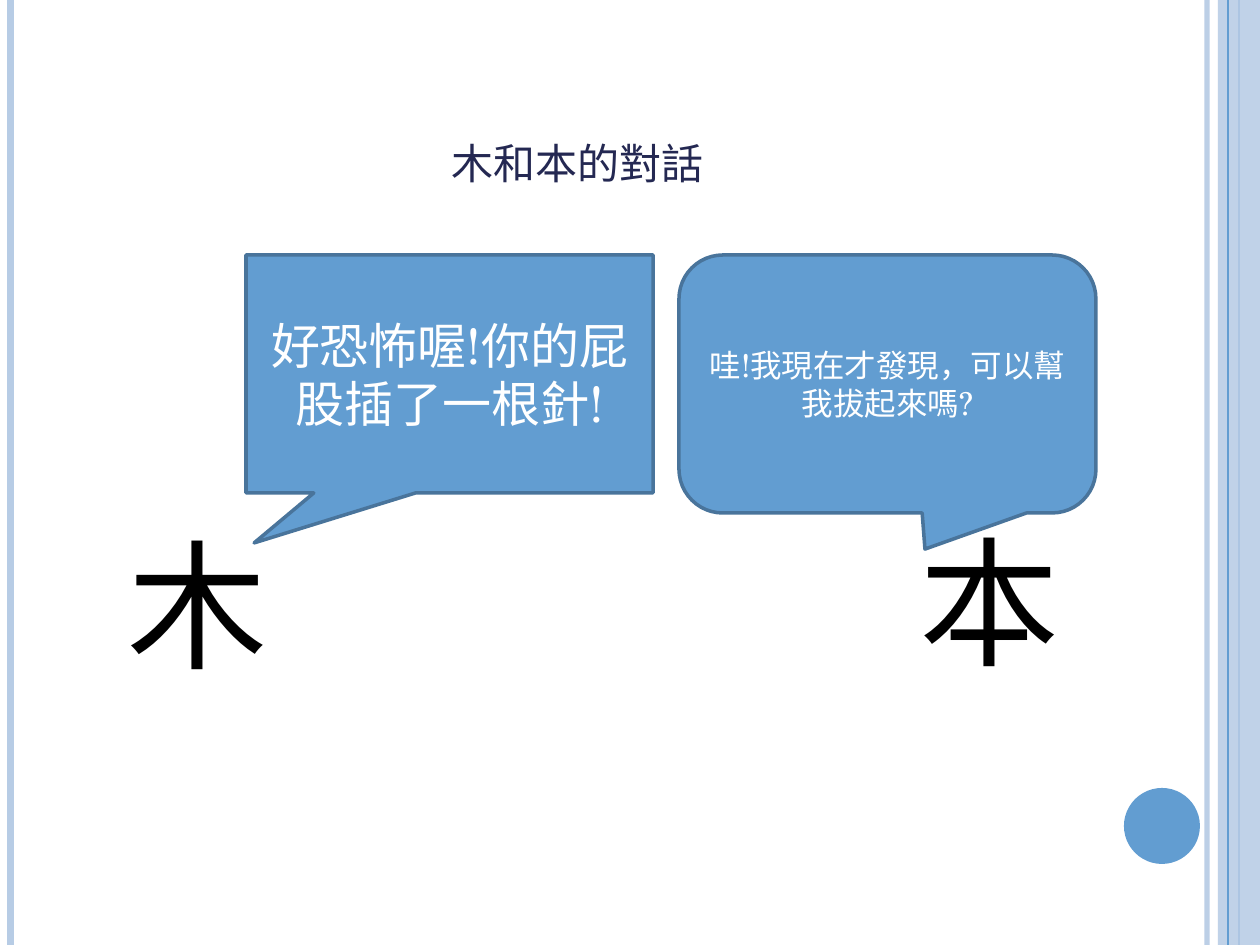
from dataclasses import dataclass

from lxml.etree import SubElement
from pptx import Presentation
from pptx.dml.color import RGBColor
from pptx.enum.shapes import MSO_CONNECTOR, MSO_SHAPE
from pptx.enum.text import MSO_ANCHOR as Anchor, MSO_AUTO_SIZE as AutoSize, PP_ALIGN as Align
from pptx.oxml.ns import qn
from pptx.util import Emu, Pt

EMU_PER_PX = 914400 / 126
SLIDE_WIDTH, SLIDE_HEIGHT = 1260, 945


@dataclass(frozen=True)
class Theme:
    font: str = "TeX Gyre Schola"
    blue: str = "629DD1"
    pale_blue: str = "B7CCE5"
    outline: str = "49749B"
    navy: str = "242852"
    black: str = "000000"
    white: str = "FFFFFF"
    title_size: int = 30
    character_size: int = 80
    large_speech_size: int = 28
    small_speech_size: int = 18


THEME = Theme()


def px(length):
    return Emu(round(length * EMU_PER_PX))


def rgb(color):
    return RGBColor.from_string(color)


def set_opacity(color_format, percent):
    """Make a solid fill or line see-through; color_format is its fill."""
    color = color_format._xPr.find(qn("a:solidFill"))[0]
    SubElement(color, qn("a:alpha"), val=str(percent * 1000))


def add_stripe(slide, x, color, width, opacity=100):
    """Draw a vertical line over the full slide height."""
    line = slide.shapes.add_connector(
        MSO_CONNECTOR.STRAIGHT, px(x), 0, px(x), px(SLIDE_HEIGHT))
    line.line.width = Pt(width)
    line.line.color.rgb = rgb(color)
    if opacity < 100:
        set_opacity(line.line.fill, opacity)
    SubElement(line._element.spPr, qn("a:effectLst"))


def add_filled_shape(slide, kind, box, color):
    shape = slide.shapes.add_shape(kind, *map(px, box))
    shape.shadow.inherit = False
    shape.fill.solid()
    shape.fill.fore_color.rgb = rgb(color)
    shape.line.fill.background()
    return shape


def write_text(frame, text, size, color, align=Align.LEFT):
    paragraph = frame.paragraphs[0]
    paragraph.alignment = align
    run = paragraph.add_run()
    run.text = text
    run.font.name = THEME.font
    run.font.size = Pt(size)
    run.font.color.rgb = rgb(color)
    return run


def add_title(slide, text):
    frame = slide.shapes.add_textbox(*map(px, (63, 38, 1029, 158))).text_frame
    frame.word_wrap = True
    frame.vertical_anchor = Anchor.BOTTOM
    run = write_text(frame, text, THEME.title_size, THEME.navy, Align.CENTER)
    run.font._element.set("cap", "small")


def add_character(slide, text, left, top):
    frame = slide.shapes.add_textbox(*map(px, (left, top, 166, 183))).text_frame
    frame.word_wrap = False
    frame.auto_size = AutoSize.SHAPE_TO_FIT_TEXT
    write_text(frame, text, THEME.character_size, THEME.black)


def add_callout(slide, kind, box, adjustments, text, size):
    callout = add_filled_shape(slide, kind, box, THEME.blue)
    for index, value in enumerate(adjustments):
        callout.adjustments[index] = value
    callout.line.color.rgb = rgb(THEME.outline)
    callout.line.width = Pt(2)
    frame = callout.text_frame
    frame.word_wrap = True
    frame.vertical_anchor = Anchor.MIDDLE
    write_text(frame, text, size, THEME.white, Align.CENTER)


def add_decoration(slide):
    add_stripe(slide, 1207, THEME.pale_blue, 3, opacity=93)
    add_stripe(slide, 10.5, THEME.pale_blue, 4.5)
    add_stripe(slide, 1239, THEME.blue, 1.5)
    band = add_filled_shape(
        slide, MSO_SHAPE.RECTANGLE, (1218, 0, 42, SLIDE_HEIGHT), THEME.pale_blue)
    set_opacity(band.fill, 87) if hasattr(band.fill, "_xPr") else SubElement(
        band._element.spPr.find(qn("a:solidFill"))[0], qn("a:alpha"), val="87000")
    add_stripe(slide, 1228, THEME.blue, 0.75)
    add_filled_shape(slide, MSO_SHAPE.OVAL, (1124, 788, 76, 76), THEME.blue)


def main():
    presentation = Presentation()
    presentation.slide_width = px(SLIDE_WIDTH)
    presentation.slide_height = px(SLIDE_HEIGHT)
    slide = presentation.slides.add_slide(presentation.slide_layouts[6])

    add_decoration(slide)
    add_title(slide, "木和本的對話")
    add_character(slide, "木", 115, 512)
    add_character(slide, "本", 907, 509)
    add_callout(slide, MSO_SHAPE.RECTANGULAR_CALLOUT, (246, 255, 407, 238),
                (-0.48, 0.71), "好恐怖喔!你的屁股插了一根針!",
                THEME.large_speech_size)
    add_callout(slide, MSO_SHAPE.ROUNDED_RECTANGULAR_CALLOUT, (679, 255, 417, 258),
                (0.09, 0.64, 0.17), "哇!我現在才發現，可以幫我拔起來嗎?",
                THEME.small_speech_size)

    presentation.save("out.pptx")


if __name__ == "__main__":
    main()
